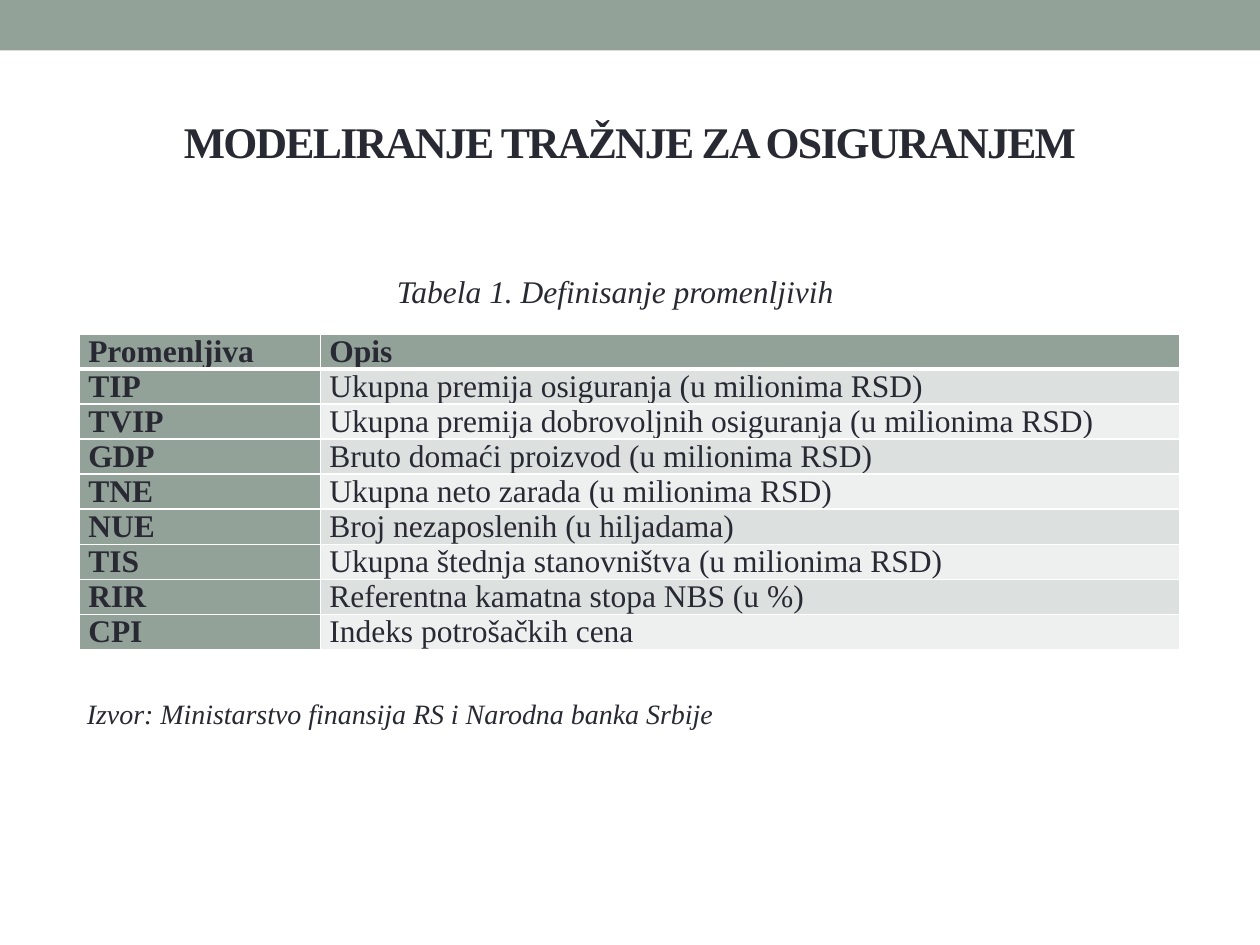
"""Build a slide that defines the variables of the insurance demand model."""
from dataclasses import dataclass

from lxml import etree
from pptx import Presentation
from pptx.dml.color import RGBColor
from pptx.enum.shapes import MSO_SHAPE
from pptx.enum.text import MSO_ANCHOR, MSO_AUTO_SIZE, PP_ALIGN
from pptx.oxml.ns import qn
from pptx.util import Cm, Pt

RECTANGLE = MSO_SHAPE.RECTANGLE
MIDDLE = MSO_ANCHOR.MIDDLE
FIXED_SIZE = MSO_AUTO_SIZE.NONE
LEFT, CENTER, JUSTIFY = PP_ALIGN.LEFT, PP_ALIGN.CENTER, PP_ALIGN.JUSTIFY
TITLE_ONLY_LAYOUT = 5


@dataclass(frozen=True)
class Theme:
    font: str = "Times New Roman"
    ink: str = "292934"
    accent: str = "93A299"
    paper: str = "FFFFFF"
    bands: tuple[str, str] = ("DCE0DE", "EEF0EF")
    title_size: float = 25
    body_size: float = 18
    source_size: float = 16
    row_pitch: float = 20


@dataclass(frozen=True)
class Area:
    left: float
    top: float
    width: float
    height: float

    def lengths(self) -> tuple:
        return Cm(self.left), Cm(self.top), Cm(self.width), Cm(self.height)


@dataclass(frozen=True)
class Note:
    text: str
    area: Area
    size: float
    align: PP_ALIGN


@dataclass(frozen=True)
class Variable:
    code: str
    description: str


THEME = Theme()
TITLE = "MODELIRANJE TRAŽNJE ZA OSIGURANJEM"
TITLE_AREA = Area(1.27, 1.47, 22.86, 2.74)
BAR_AREA = Area(0, 0, 25.4, 1.02)
TABLE_AREA = Area(1.6, 6.73, 22.19, 6.3)
COLUMN_WIDTHS = (4.86, 17.33)
HEADER = Variable("Promenljiva", "Opis")
VARIABLES = (
    Variable("TIP", "Ukupna premija osiguranja (u milionima RSD)"),
    Variable("TVIP", "Ukupna premija dobrovoljnih osiguranja (u milionima RSD)"),
    Variable("GDP", "Bruto domaći proizvod (u milionima RSD)"),
    Variable("TNE", "Ukupna neto zarada (u milionima RSD)"),
    Variable("NUE", "Broj nezaposlenih (u hiljadama)"),
    Variable("TIS", "Ukupna štednja stanovništva (u milionima RSD)"),
    Variable("RIR", "Referentna kamatna stopa NBS (u %)"),
    Variable("CPI", "Indeks potrošačkih cena"),
)
NOTES = (
    Note("Tabela 1. Definisanje promenljivih",
         Area(2.31, 5.36, 20.19, 1.02), THEME.body_size, CENTER),
    Note("Izvor: Ministarstvo finansija RS i Narodna banka Srbije",
         Area(1.5, 13.92, 22.61, 0.94), THEME.source_size, LEFT),
)


def paint(target, color: str) -> None:
    """Fill a shape or cell with one colour."""
    target.fill.solid()
    target.fill.fore_color.rgb = RGBColor.from_string(color)


def format_paragraph(para, size: float, align: PP_ALIGN,
                     bold: bool = False, italic: bool = False) -> None:
    """Apply the theme's font to a paragraph."""
    para.alignment = align
    font = para.font
    font.name, font.size = THEME.font, Pt(size)
    font.bold, font.italic = bold, italic
    font.color.rgb = RGBColor.from_string(THEME.ink)


def add_bar(slide) -> None:
    """Draw the band along the top edge."""
    bar = slide.shapes.add_shape(RECTANGLE, *BAR_AREA.lengths())
    bar.shadow.inherit = False
    paint(bar, THEME.accent)
    bar.line.fill.background()


def set_title(slide) -> None:
    """Place and format the title placeholder."""
    title = slide.shapes.title
    title.left, title.top, title.width, title.height = TITLE_AREA.lengths()
    frame = title.text_frame
    frame.text = TITLE
    frame.auto_size = FIXED_SIZE
    frame.vertical_anchor = MIDDLE
    para = frame.paragraphs[0]
    format_paragraph(para, THEME.title_size, CENTER, bold=True)
    para.runs[0].font._element.set("spc", "-100")


def add_borders(cell, bottom: float) -> None:
    """Give a cell white borders with the stated bottom width in points."""
    properties = cell._tc.get_or_add_tcPr()
    for side, width in (("L", 1), ("R", 1), ("T", 1), ("B", bottom)):
        line = etree.SubElement(properties, qn(f"a:ln{side}"), w=str(Pt(width)))
        fill = etree.SubElement(line, qn("a:solidFill"))
        etree.SubElement(fill, qn("a:srgbClr"), val=THEME.paper)


def fill_cell(cell, text: str, color: str, bold: bool, bottom: float) -> None:
    """Write and format one table cell."""
    cell.text = text
    cell.vertical_anchor = MIDDLE
    cell.margin_left = cell.margin_right = Cm(0.18)
    cell.margin_top = cell.margin_bottom = 0
    para = cell.text_frame.paragraphs[0]
    para.line_spacing = Pt(THEME.row_pitch)
    format_paragraph(para, THEME.body_size, JUSTIFY, bold=bold)
    add_borders(cell, bottom)
    paint(cell, color)


def add_variable_table(slide) -> None:
    """Add the table of variables under its header row."""
    records = (HEADER, *VARIABLES)
    table = slide.shapes.add_table(
        len(records), len(COLUMN_WIDTHS), *TABLE_AREA.lengths()).table
    table.first_col = True
    table.horz_banding = False
    for column, width in zip(table.columns, COLUMN_WIDTHS):
        column.width = Cm(width)
    for index, (row, record) in enumerate(zip(table.rows, records)):
        row.height = Cm(TABLE_AREA.height / len(records))
        is_header = index == 0
        band = THEME.accent if is_header else THEME.bands[(index - 1) % 2]
        bottom = 3 if is_header else 1
        fill_cell(row.cells[0], record.code, THEME.accent, True, bottom)
        fill_cell(row.cells[1], record.description, band, is_header, bottom)


def add_note(slide, note: Note) -> None:
    """Add an italic line of text on a white box."""
    box = slide.shapes.add_textbox(*note.area.lengths())
    paint(box, THEME.paper)
    frame = box.text_frame
    frame.word_wrap = True
    frame.vertical_anchor = MIDDLE
    frame.text = note.text
    format_paragraph(frame.paragraphs[0], note.size, note.align, italic=True)


def main() -> None:
    """Build and save the deck."""
    deck = Presentation()
    deck.slide_width, deck.slide_height = Cm(25.4), Cm(19.05)
    slide = deck.slides.add_slide(deck.slide_layouts[TITLE_ONLY_LAYOUT])
    add_bar(slide)
    set_title(slide)
    add_variable_table(slide)
    for note in NOTES:
        add_note(slide, note)
    deck.save("out.pptx")


if __name__ == "__main__":
    main()
